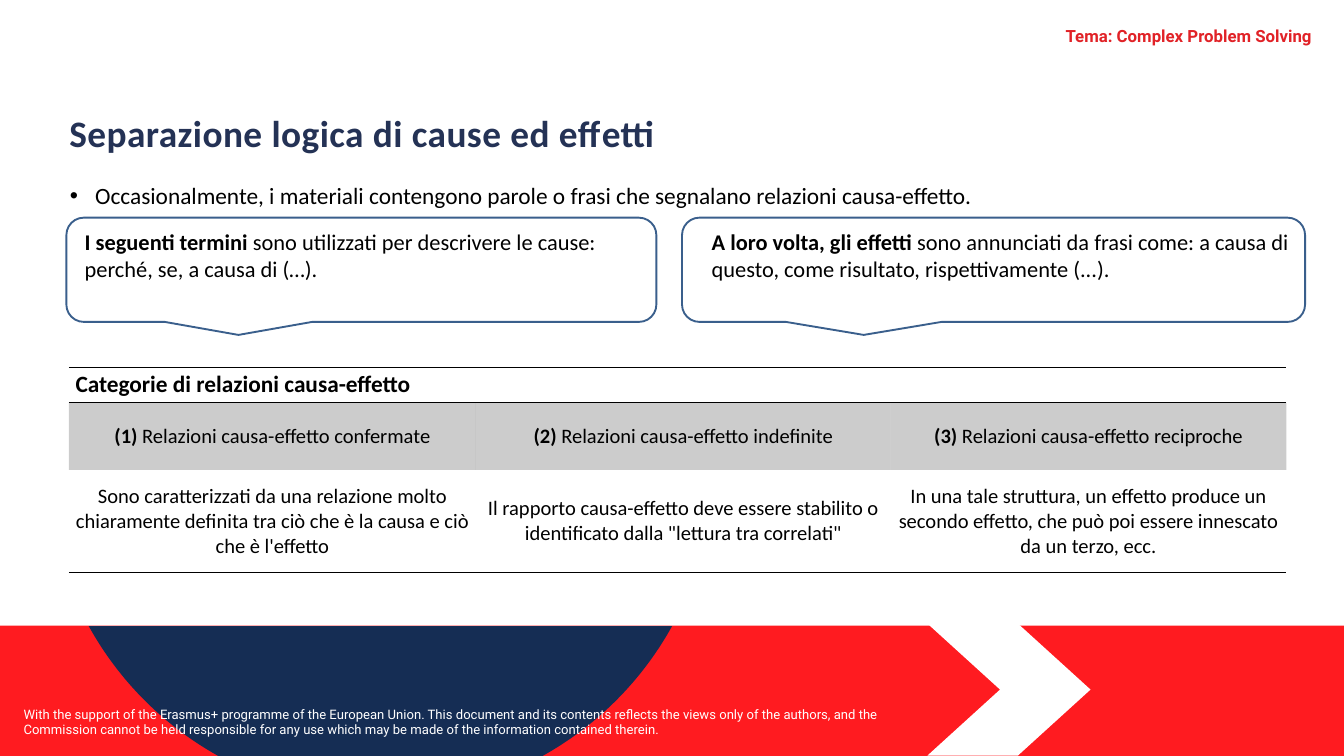
from dataclasses import dataclass
from math import asin, cos, pi, sin

from lxml.etree import SubElement
from pptx import Presentation
from pptx.dml.color import RGBColor
from pptx.enum.shapes import MSO_SHAPE as Preset
from pptx.enum.text import MSO_ANCHOR as Anchor, MSO_AUTO_SIZE as AutoSize, PP_ALIGN as Align
from pptx.oxml.ns import qn
from pptx.util import Cm, Pt


@dataclass(frozen=True)
class Theme:
    black: str = "000000"
    white: str = "FFFFFF"
    red: str = "FF1B20"
    navy: str = "152D54"
    title: str = "243255"
    topic: str = "E12227"
    outline: str = "3A5F8C"
    body_font: str = "Calibri"
    brand_font: str = "Roboto"
    title_size: float = 40
    lead_size: float = 25
    callout_size: float = 24
    cell_size: float = 22
    topic_size: float = 18
    notice_size: float = 14


@dataclass(frozen=True)
class Box:
    x: float
    y: float
    w: float
    h: float

    def inner(self, dx, dy, w, h):
        return Box(self.x + dx, self.y + dy, w, h)

    def lengths(self):
        return [Cm(v) for v in (self.x, self.y, self.w, self.h)]


THEME = Theme()
TIGHT = {"margin_left": 0, "margin_right": 0, "margin_top": Cm(0.05), "margin_bottom": 0}


def apply(target, values):
    for key, value in values.items():
        setattr(target, key, value)


def write(paragraph, runs, size, color=THEME.black, font=THEME.body_font, align=Align.LEFT):
    paragraph.alignment = align
    for words, bold in runs:
        run = paragraph.add_run()
        run.text = words
        apply(run.font, {"name": font, "size": Pt(size), "bold": bold})
        run.font.color.rgb = RGBColor.from_string(color)


def add_text(slide, box, runs, size, frame_format=TIGHT, **style):
    frame = slide.shapes.add_textbox(*box.lengths()).text_frame
    apply(frame, {"word_wrap": True, **frame_format})
    write(frame.paragraphs[0], runs, size, **style)
    return frame.paragraphs[0]


def paint(shape, fill=None, line=None):
    shape.shadow.inherit = False
    if fill:
        shape.fill.solid()
        shape.fill.fore_color.rgb = RGBColor.from_string(fill)
    else:
        shape.fill.background()
    if line:
        shape.line.color.rgb = RGBColor.from_string(line)
        shape.line.width = Pt(2)
    else:
        shape.line.fill.background()


def add_footer(slide, box, notice):
    paint(slide.shapes.add_shape(Preset.RECTANGLE, *box.lengths()), THEME.red)

    center_x, center_y, radius, steps = box.x + 14.38, box.y - 6.08, 12.6, 60
    start = asin((box.y + 0.02 - center_y) / radius)
    end = asin((box.y + box.h - center_y) / radius)
    right = [start + (end - start) * i / steps for i in range(steps + 1)]
    angles = right + [pi - a for a in reversed(right)]
    points = [(Cm(center_x + radius * cos(a)), Cm(center_y + radius * sin(a))) for a in angles]
    builder = slide.shapes.build_freeform(*points[0])
    builder.add_line_segments(points[1:], close=True)
    paint(builder.convert_to_shape(), THEME.navy)

    chevron = slide.shapes.add_shape(Preset.CHEVRON, *box.inner(35.05, -0.08, 6.17, 5).lengths())
    chevron.adjustments[0] = 0.55
    paint(chevron, THEME.white)
    add_text(slide, box.inner(0.64, 2.92, 34.93, 1.45), [(notice, False)], THEME.notice_size,
             frame_format={}, color=THEME.white, font=THEME.brand_font)


def add_heading(slide, box, heading, lead):
    title = slide.shapes.title
    apply(title, dict(zip(("left", "top", "width", "height"),
                          box.inner(0, 0, box.w, 1.8).lengths())))
    apply(title.text_frame, {**TIGHT, "vertical_anchor": Anchor.TOP,
                             "auto_size": AutoSize.NONE, "word_wrap": True})
    paragraph = title.text_frame.paragraphs[0]
    write(paragraph, [(heading, True)], THEME.title_size, color=THEME.title)
    paragraph.runs[0].font._element.set("spc", "50")

    bullet = add_text(slide, box.inner(0, 2.7, box.w, 1.15), [(lead, False)], THEME.lead_size)
    properties = bullet._p.get_or_add_pPr()
    properties.set("marL", str(Cm(0.98)))
    properties.set("indent", str(-Cm(0.96)))
    SubElement(properties, qn("a:buFont"), typeface="Arial")
    SubElement(properties, qn("a:buChar"), char="•")


def add_callout(slide, box, text_box, term, explanation):
    paint(slide.shapes.add_shape(Preset.ROUNDED_RECTANGULAR_CALLOUT, *box.lengths()),
          line=THEME.outline)
    add_text(slide, text_box, [(term, True), (explanation, False)], THEME.callout_size)


def set_borders(cell, edges):
    properties = cell._tc.get_or_add_tcPr()
    for position, side in enumerate("LRTB"):
        border = SubElement(properties, qn(f"a:ln{side}"), w=str(Pt(1)))
        if side in edges:
            fill = SubElement(border, qn("a:solidFill"))
            SubElement(fill, qn("a:srgbClr"), val=THEME.black)
        else:
            SubElement(border, qn("a:noFill"))
        properties.insert(position, border)


def add_categories(slide, box, heading, categories):
    table = slide.shapes.add_table(3, len(categories), *box.lengths()).table
    apply(table, {"first_row": False, "horz_banding": False})
    for column, width in zip(table.columns, (15.39, 15.67, 14.96)):
        column.width = Cm(width)
    for row, height in zip(table.rows, (1.33, 2.54, 3.88)):
        row.height = Cm(height)
    for row, edges in zip(table.rows, ("TB", "T", "B")):
        for cell in row.cells:
            cell.fill.background()
            set_borders(cell, edges)

    table.cell(0, 0).merge(table.cell(0, len(categories) - 1))
    write(table.cell(0, 0).text_frame.paragraphs[0], [(heading, True)], THEME.lead_size)

    centred = {"vertical_anchor": Anchor.MIDDLE, "margin_left": Cm(0.18),
               "margin_right": Cm(0.18), "margin_top": 0, "margin_bottom": 0}
    for index, (name, description) in enumerate(categories):
        label, detail = table.cell(1, index), table.cell(2, index)
        label.fill.solid()
        label.fill.fore_color.rgb = RGBColor.from_string(THEME.black)
        tint = label._tc.tcPr.find(qn("a:solidFill"))[0]
        SubElement(tint, qn("a:alpha"), val="20000")
        contents = ((label, [(f"({index + 1}) ", True), (name, False)]),
                    (detail, [(description, False)]))
        for cell, runs in contents:
            apply(cell, centred)
            write(cell.text_frame.paragraphs[0], runs, THEME.cell_size, align=Align.CENTER)


def main():
    deck = Presentation()
    apply(deck, {"slide_width": Cm(50.8), "slide_height": Cm(28.58)})
    slide = deck.slides.add_slide(deck.slide_layouts[5])

    add_footer(slide, Box(0, 23.65, 50.8, 4.93),
               "With the support of the Erasmus+ programme of the European Union. This document "
               "and its contents reflects the views only of the authors, and the Commission cannot "
               "be held responsible for any use which may be made of the information contained therein.")
    add_heading(slide, Box(2.62, 4.11, 46.71, 4.85), "Separazione logica di cause ed effetti",
                "Occasionalmente, i materiali contengono parole o frasi che segnalano relazioni "
                "causa-effetto.")

    causes = Box(2.51, 8.23, 22.3, 3.94)
    effects = Box(25.78, 8.23, 23.55, 3.94)
    add_callout(slide, causes, causes.inner(0.69, 0.36, 22.02, 2.08), "I seguenti termini ",
                "sono utilizzati per descrivere le cause: perché, se, a causa di (…).")
    add_callout(slide, effects, effects.inner(1.12, 0.36, 22.66, 2.08), "A loro volta, gli effetti ",
                "sono annunciati da frasi come: a causa di questo, come risultato, "
                "rispettivamente (...).")

    add_categories(slide, Box(2.6, 13.89, 46.02, 7.75), "Categorie di relazioni causa-effetto", [
        ("Relazioni causa-effetto confermate",
         "Sono caratterizzati da una relazione molto chiaramente definita tra ciò che è la causa "
         "e ciò che è l'effetto"),
        ("Relazioni causa-effetto indefinite",
         "Il rapporto causa-effetto deve essere stabilito o identificato dalla "
         "\"lettura tra correlati\""),
        ("Relazioni causa-effetto reciproche",
         "In una tale struttura, un effetto produce un secondo effetto, che può poi essere "
         "innescato da un terzo, ecc."),
    ])
    add_text(slide, Box(22.86, 0.94, 26.72, 0.81), [("Tema: Complex Problem Solving", True)],
             THEME.topic_size, color=THEME.topic, font=THEME.brand_font, align=Align.RIGHT)
    deck.save("out.pptx")


if __name__ == "__main__":
    main()
